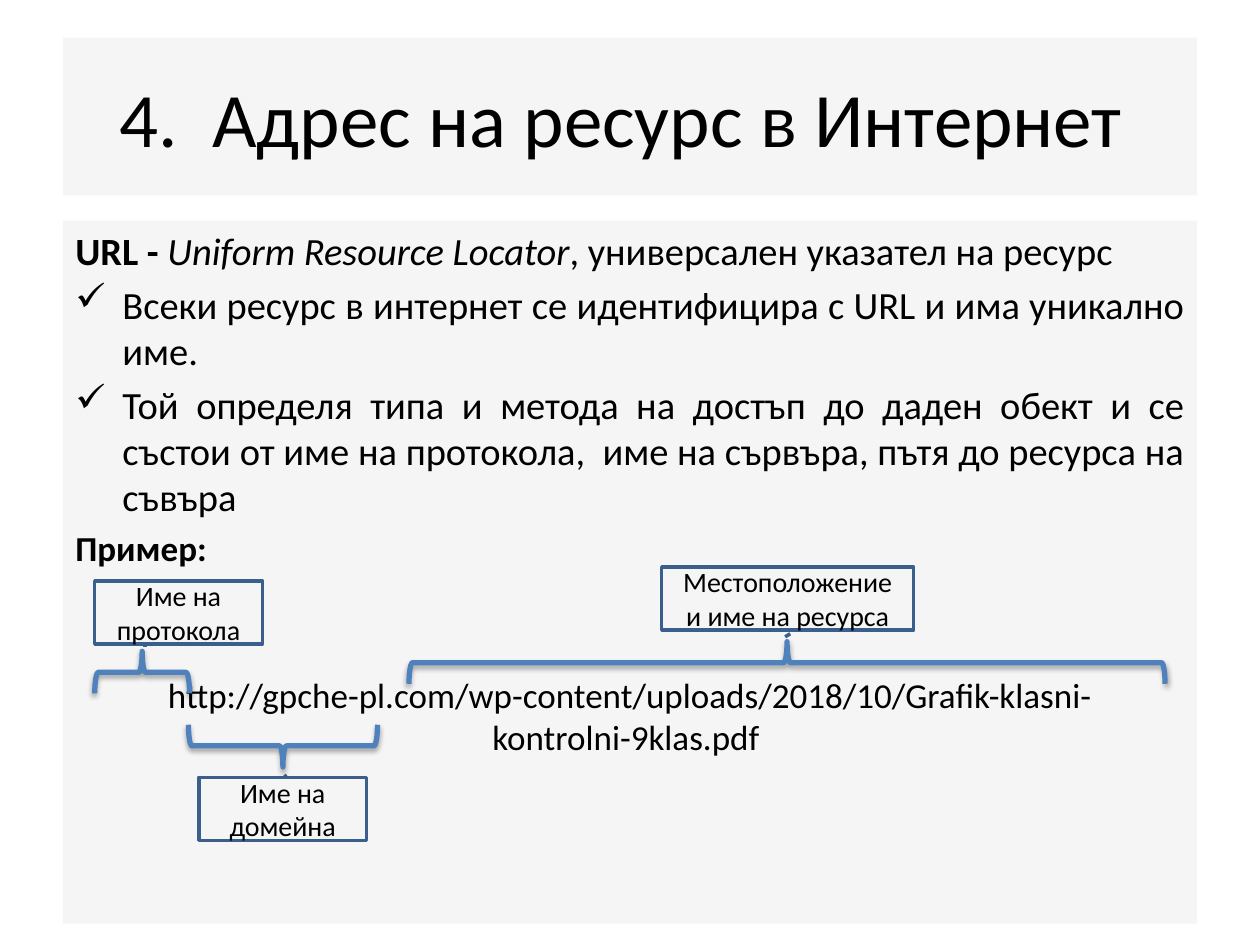
"""Build a slide that explains the parts of a URL."""
from pptx import Presentation
from pptx.dml.color import RGBColor
from pptx.enum.shapes import MSO_SHAPE
from pptx.enum.text import MSO_ANCHOR, MSO_AUTO_SIZE, PP_ALIGN
from pptx.oxml.ns import qn
from pptx.oxml.xmlchemy import OxmlElement
from pptx.util import Cm, Pt

LEFT, MID, JUST = PP_ALIGN.LEFT, PP_ALIGN.CENTER, PP_ALIGN.JUSTIFY
MIDDLE = MSO_ANCHOR.MIDDLE
FIXED = MSO_AUTO_SIZE.NONE
NOTE, BRACE = MSO_SHAPE.LINE_CALLOUT_1, MSO_SHAPE.LEFT_BRACE
FONT = "Calibri"
HUES = {"panel": "F2F2F2", "text": "000000", "edge": "3A5F8C", "brace": "4F81BD"}


def add_run(par, text, size, bold=False, slant=False):
    run = par.add_run()
    run.text = text
    font = run.font
    font.name, font.size, font.bold, font.italic = FONT, Pt(size), bold, slant
    font.color.rgb = RGBColor.from_string(HUES["text"])


def add_node(parent, tag, **attrs):
    node = OxmlElement(tag)
    for key, val in attrs.items():
        node.set(key, str(val))
    parent.append(node)
    return node


prs = Presentation()
prs.slide_width, prs.slide_height = Cm(25.4), Cm(19.05)
slide = prs.slides.add_slide(prs.slide_layouts[5])
shapes = slide.shapes

title = shapes.title
title.left, title.top, title.width, title.height = Cm(1.27), Cm(0.76), Cm(22.86), Cm(3.18)
head = title.text_frame
head.auto_size, head.vertical_anchor = FIXED, MIDDLE
head.paragraphs[0].alignment = MID
add_run(head.paragraphs[0], "4.  Адрес на ресурс в Интернет ", 44)

body = shapes.add_textbox(Cm(1.27), Cm(4.45), Cm(22.86), Cm(14.17))
frame = body.text_frame
frame.word_wrap = True

for panel in (title, body):
    panel.fill.solid()
    panel.fill.fore_color.rgb = RGBColor.from_string(HUES["panel"])
    tint = panel._element.spPr.find(".//" + qn("a:srgbClr"))
    add_node(tint, "a:alpha", val=75000)

lines = [
    (LEFT, 0, 22, False, [
        ("URL - ", True, False),
        ("Uniform Resource Locator", False, True),
        (", универсален указател на ресурс", False, False)]),
    (JUST, 4.4, 22, True, [
        ("Всеки ресурс в интернет се идентифицира с URL и има уникално име. ", False, False)]),
    (JUST, 4.4, 22, True, [
        ("Той определя типа и метода на достъп до даден обект и се състои от "
         "име на протокола,  име на сървъра, пътя до ресурса на съвъра", False, False)]),
    (LEFT, 4, 20, False, [("Пример:", True, False)]),
    (MID, 60, 20, False, [
        ("http://gpche-pl.com/wp-content/uploads/2018/10/"
         "Grafik-klasni-kontrolni-9klas.pdf ", False, False)]),
]
for i, (align, gap, size, check, runs) in enumerate(lines):
    par = frame.add_paragraph() if i else frame.paragraphs[0]
    if check:
        props = par._p.get_or_add_pPr()
        props.set("marL", str(Cm(0.95)))
        props.set("indent", str(-Cm(0.95)))
        add_node(props, "a:buChar", char="✓")
    par.alignment = align
    if gap:
        par.space_before = Pt(gap)
    for text, bold, slant in runs:
        add_run(par, text, size, bold, slant)

notes = [
    ("Име на протокола", 1.91, 11.71, 3.38, (1.04, 0.3, 1.05, 0.3)),
    ("Име на домейна", 4.01, 15.67, 3.38, (-0.01, 0.52, -0.04, 0.51)),
    ("Местоположение и име на ресурса", 13.34, 11.43, 5.08, (1.06, 0.51, 1.11, 0.49)),
]
for text, x, y, wide, tail in notes:
    note = shapes.add_shape(NOTE, Cm(x), Cm(y), Cm(wide), Cm(1.27))
    for i, val in enumerate(tail):
        note.adjustments[i] = val
    note.shadow.inherit = False
    note.fill.background()
    note.line.color.rgb = RGBColor.from_string(HUES["edge"])
    note.line.width = Pt(2)
    label = note.text_frame
    label.word_wrap, label.vertical_anchor = True, MIDDLE
    label.paragraphs[0].alignment = MID
    add_run(label.paragraphs[0], text, 16)

braces = [(2.44, 12.6, 1.91, 90), (5.28, 13.13, 3.81, 270), (15.44, 5.74, 15.24, 90)]
for x, y, span, turn in braces:
    brace = shapes.add_shape(BRACE, Cm(x), Cm(y), Cm(0.85), Cm(span))
    brace.rotation = turn
    brace.fill.background()
    brace.line.color.rgb = RGBColor.from_string(HUES["brace"])
    brace.line.width = Pt(3)
    brace.shadow.inherit = False
    effects = brace._element.spPr.find(qn("a:effectLst"))
    shade = add_node(effects, "a:outerShdw", blurRad=Pt(3.1), dist=Pt(1.8),
                     dir=5400000, rotWithShape=0)
    tint = add_node(shade, "a:srgbClr", val=HUES["text"])
    add_node(tint, "a:alpha", val=35000)

prs.save("out.pptx")
